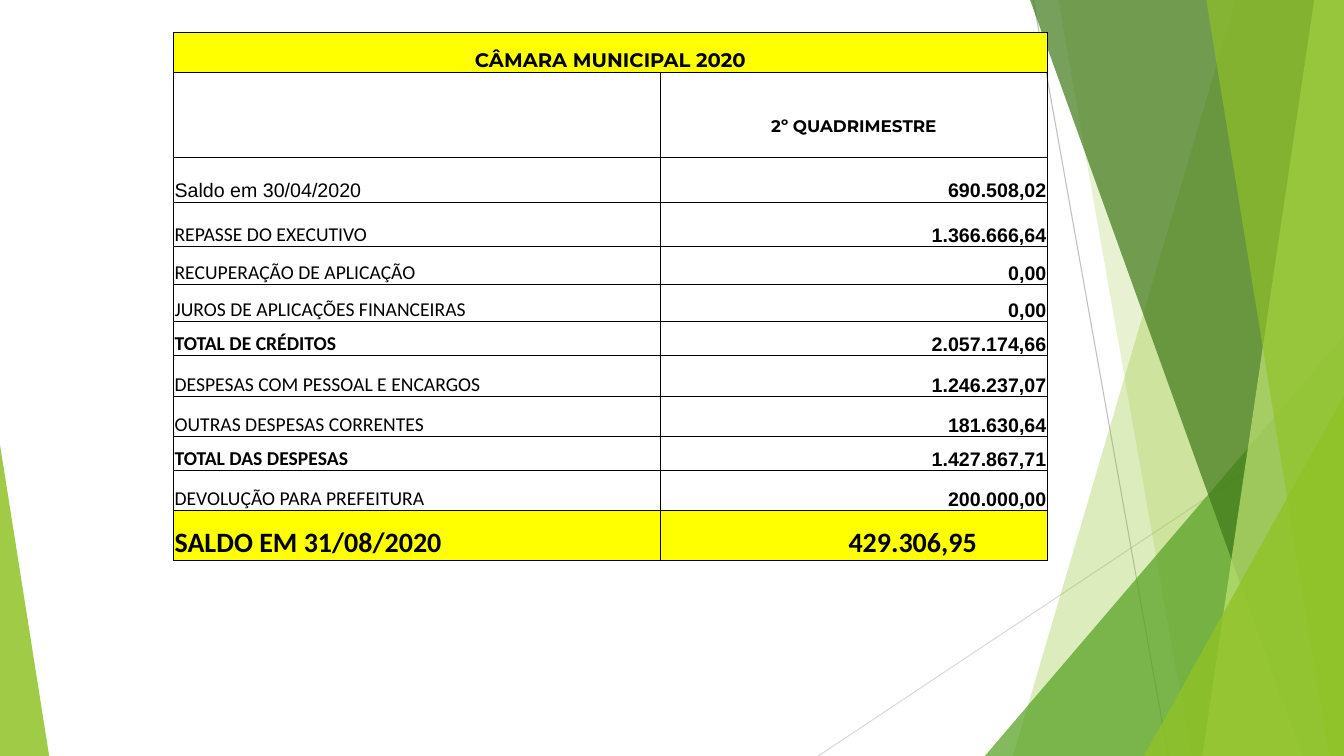
import pptx
import pptx.util
import pptx.dml.color
import pptx.enum.shapes
import pptx.enum.text
import pptx.oxml
import pptx.oxml.ns
from pptx.util import Cm

THEME = {
    "colors": {"text": "000000", "highlight": "FFFF00", "border": "000000",
               "lime": "90C226", "green": "54A021", "forest": "3F7819",
               "pale": "C0E474", "light gray": "D9D9D9", "gray": "BFBFBF"},
    "sizes": {"title": 14, "header": 12, "body": 14, "balance": 20},
    "fonts": {"heading": "Montserrat", "label": "Calibri", "value": "Arial"},
    "lines": {"outer": 1, "inner": 0.75},
}
COLORS, SIZES, FONTS, LINES = (THEME[key] for key in ("colors", "sizes", "fonts", "lines"))

# Content
TITLE = "CÂMARA MUNICIPAL 2020"
PERIOD = "2º QUADRIMESTRE"
# label, value, row height in cm, kind of row
ACCOUNTS = [
    ("Saldo em 30/04/2020", "690.508,02", 1.12, "opening"),
    ("REPASSE DO EXECUTIVO", "1.366.666,64", 1.13, "item"),
    ("RECUPERAÇÃO DE APLICAÇÃO", "0,00", 0.96, "item"),
    ("JUROS DE APLICAÇÕES FINANCEIRAS", "0,00", 0.92, "item"),
    ("TOTAL DE CRÉDITOS", "2.057.174,66", 0.87, "total"),
    ("DESPESAS COM PESSOAL E ENCARGOS", "1.246.237,07", 1.03, "item"),
    ("OUTRAS DESPESAS CORRENTES", "181.630,64", 1.0, "item"),
    ("TOTAL DAS DESPESAS", "1.427.867,71", 0.86, "total"),
    ("DEVOLUÇÃO PARA PREFEITURA", "200.000,00", 1.01, "item"),
    ("SALDO EM 31/08/2020", "429.306,95", 1.25, "balance"),
]
HEADING_HEIGHTS = [1.01, 2.14]
COLUMN_WIDTHS = [12.27, 9.76]
TABLE_LEFT, TABLE_TOP = 4.37, 0.82

# Decoration, in cm, from back to front
WIDTH, HEIGHT = 33.87, 19.05
RAYS = [
    ((20.62, HEIGHT), (WIDTH, 10.24), "light gray"),
    ((26.04, 0), (29.44, HEIGHT), "gray"),
]
FACETS = [  # colour, opacity in percent, corners
    ("lime", 30, [(31.14, 0), (25.53, HEIGHT), (WIDTH, HEIGHT), (WIDTH, 0)]),
    ("lime", 20, [(26.67, 0), (30.02, HEIGHT), (WIDTH, HEIGHT), (WIDTH, 0)]),
    ("green", 72, [(24.82, HEIGHT), (WIDTH, 8.46), (WIDTH, HEIGHT)]),
    ("forest", 70, [(25.96, 0), (32.82, HEIGHT), (WIDTH, HEIGHT), (WIDTH, 0)]),
    ("pale", 70, [(33.12, 0), (30.3, HEIGHT), (WIDTH, HEIGHT), (WIDTH, 0)]),
    ("lime", 65, [(30.4, 0), (33.5, HEIGHT), (WIDTH, HEIGHT), (WIDTH, 0)]),
    ("lime", 80, [(28.83, HEIGHT), (WIDTH, 9.98), (WIDTH, HEIGHT)]),
    ("lime", 85, [(0, 11.2), (1.24, HEIGHT), (0, HEIGHT)]),
]


def color(name):
    return pptx.dml.color.RGBColor.from_string(COLORS[name])


def add_ray(slide, start, end, color_name):
    ray = slide.shapes.add_connector(pptx.enum.shapes.MSO_CONNECTOR.STRAIGHT,
                                     *(Cm(length) for length in start + end))
    ray.line.color.rgb = color(color_name)
    ray.line.width = pptx.util.Pt(LINES["inner"])
    pptx.oxml.ns.qn("a:effectLst")
    ray._element.spPr.append(pptx.oxml.parse_xml(
        f'<a:effectLst {pptx.oxml.ns.nsdecls("a")}/>'))


def add_facet(slide, color_name, opacity, corners):
    points = [(Cm(x), Cm(y)) for x, y in corners]
    builder = slide.shapes.build_freeform(*points[0])
    builder.add_line_segments(points[1:], close=True)
    facet = builder.convert_to_shape()
    facet.shadow.inherit = False
    facet.line.fill.background()
    facet.fill.solid()
    facet.fill.fore_color.rgb = color(color_name)
    tint = facet._element.spPr.find(".//" + pptx.oxml.ns.qn("a:srgbClr"))
    tint.append(pptx.oxml.parse_xml(
        f'<a:alpha {pptx.oxml.ns.nsdecls("a")} val="{opacity * 1000}"/>'))


def set_borders(cell, outer_sides):
    properties = cell._tc.get_or_add_tcPr()
    for side in "LRTB":
        width = LINES["outer" if side in outer_sides else "inner"]
        properties.append(pptx.oxml.parse_xml(
            f'<a:ln{side} {pptx.oxml.ns.nsdecls("a")} w="{pptx.util.Pt(width)}">'
            f'<a:solidFill><a:srgbClr val="{COLORS["border"]}"/></a:solidFill>'
            f'</a:ln{side}>'))


def write_cell(cell, text, font, size, bold, align, right=0.03, bottom=0):
    margins = {"margin_left": Cm(0.03), "margin_top": Cm(0.03),
               "margin_right": Cm(right), "margin_bottom": Cm(bottom),
               "vertical_anchor": pptx.enum.text.MSO_ANCHOR.BOTTOM}
    for name, value in margins.items():
        setattr(cell, name, value)
    paragraph = cell.text_frame.paragraphs[0]
    paragraph.alignment = getattr(pptx.enum.text.PP_ALIGN, align)
    run = paragraph.add_run()
    run.text = text
    formats = {"name": FONTS[font], "size": pptx.util.Pt(SIZES[size]), "bold": bold}
    for name, value in formats.items():
        setattr(run.font, name, value)
    run.font.color.rgb = color("text")


def add_accounts_table(slide):
    heights = HEADING_HEIGHTS + [account[2] for account in ACCOUNTS]
    last_row = len(heights) - 1
    table = slide.shapes.add_table(
        len(heights), len(COLUMN_WIDTHS), Cm(TABLE_LEFT), Cm(TABLE_TOP),
        Cm(sum(COLUMN_WIDTHS)), Cm(sum(heights))).table
    table.first_row = table.horz_banding = False
    for column, width in zip(table.columns, COLUMN_WIDTHS):
        column.width = Cm(width)

    # Borders and fills
    for row_index, height in enumerate(heights):
        table.rows[row_index].height = Cm(height)
        for column_index in range(len(COLUMN_WIDTHS)):
            cell = table.cell(row_index, column_index)
            outer = "L" if column_index == 0 else ""
            outer += {0: "LRTB", 1: "T", last_row: "B"}.get(row_index, "")
            set_borders(cell, outer)
            if row_index in (0, last_row):
                cell.fill.solid()
                cell.fill.fore_color.rgb = color("highlight")
            else:
                cell.fill.background()

    # Headings
    table.cell(0, 0).merge(table.cell(0, 1))
    write_cell(table.cell(0, 0), TITLE, "heading", "title", True, "CENTER")
    write_cell(table.cell(1, 1), PERIOD, "heading", "header", True, "CENTER", bottom=0.53)

    # Accounts
    for row_index, (label, value, _, kind) in enumerate(ACCOUNTS, len(HEADING_HEIGHTS)):
        is_balance = kind == "balance"
        size = "balance" if is_balance else "body"
        write_cell(table.cell(row_index, 0), label,
                   "value" if kind == "opening" else "label", size,
                   kind in ("total", "balance"), "LEFT")
        write_cell(table.cell(row_index, 1), value,
                   "label" if is_balance else "value", size, True, "RIGHT",
                   right=1.78 if is_balance else 0.03)


def main():
    presentation = pptx.Presentation()
    presentation.slide_width, presentation.slide_height = Cm(WIDTH), Cm(HEIGHT)
    slide = presentation.slides.add_slide(presentation.slide_layouts[6])
    for ray in RAYS:
        add_ray(slide, *ray)
    for facet in FACETS:
        add_facet(slide, *facet)
    add_accounts_table(slide)
    presentation.save("out.pptx")


if __name__ == "__main__":
    main()
